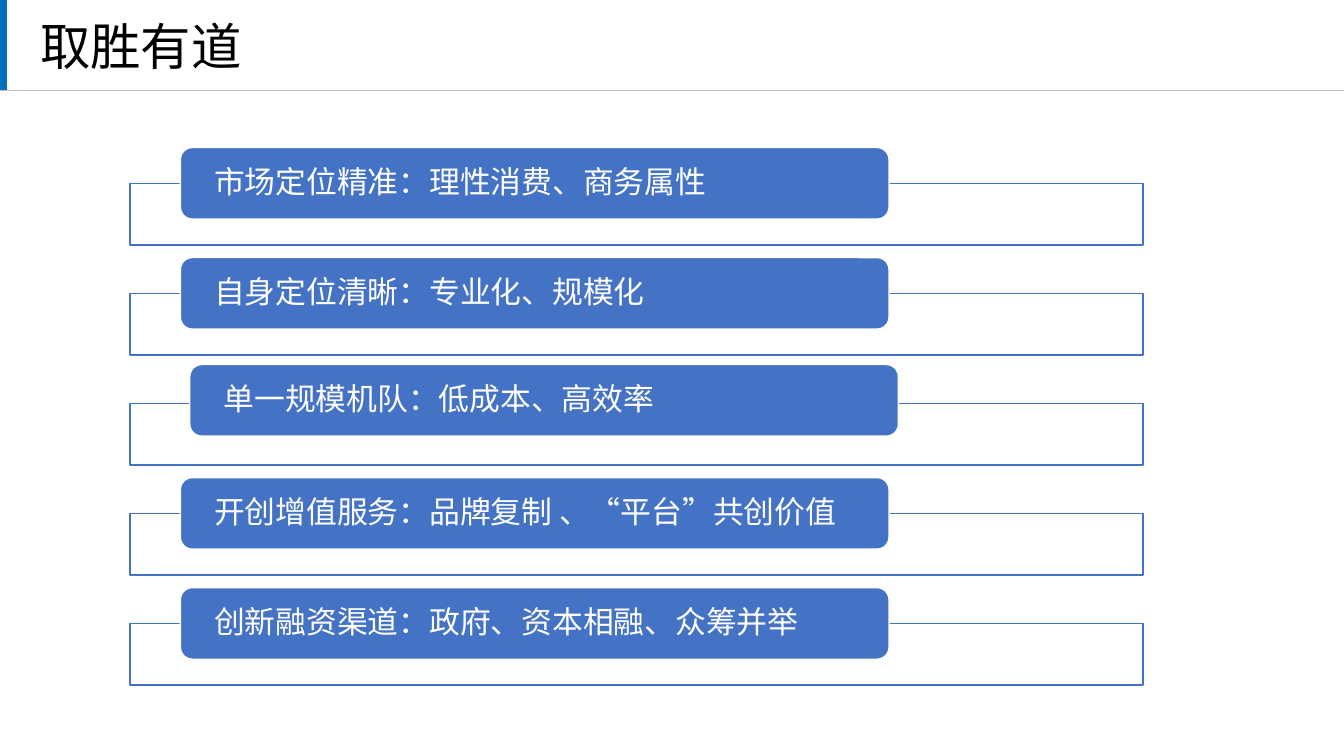
from dataclasses import dataclass

import pptx
import pptx.dml.color
import pptx.enum.shapes
import pptx.enum.text
import pptx.oxml.ns
import pptx.oxml.xmlchemy
import pptx.util
from lxml import etree

COLUMNS = 80
ROWS = 45
SLIDE_WIDTH = pptx.util.Inches(13.33)
SLIDE_HEIGHT = pptx.util.Inches(7.5)


@dataclass(frozen=True)
class Theme:
    font: str = "Noto Sans CJK SC"
    title_size: float = 36
    label_size: float = 22
    line_spacing: float = 0.9
    ink: str = "000000"
    paper: str = "FFFFFF"
    accent: str = "0070C0"
    rule: str = "BFBFBF"
    blue: str = "4472C4"
    rule_width: float = 0.75
    outline_width: float = 1
    frame_opacity: int = 90


@dataclass(frozen=True)
class Area:
    column: float
    row: float
    columns: float
    rows: float

    def moved(self, columns: float, rows: float) -> "Area":
        return Area(self.column + columns, self.row + rows, self.columns, self.rows)

    def box(self) -> tuple[int, int, int, int]:
        return across(self.column), down(self.row), across(self.columns), down(self.rows)


@dataclass(frozen=True)
class Strategy:
    text: str
    shift_columns: float = 0
    shift_rows: float = 0


THEME = Theme()
ACCENT_BAR = Area(0, 0, 0.42, 5.4)
TITLE = Area(1.8, 0.9, 43.26, 4.08)
FRAME = Area(7.74, 10.92, 60.3, 3.66)
LABEL = Area(10.74, 8.78, 42.18, 4.26)
LABEL_INSET = 1.8
PITCH = 6.55
STRATEGIES = [
    Strategy("市场定位精准：理性消费、商务属性"),
    Strategy("自身定位清晰：专业化、规模化"),
    Strategy("单一规模机队：低成本、高效率", 0.56, -0.18),
    Strategy("开创增值服务：品牌复制 、“平台”共创价值"),
    Strategy("创新融资渠道：政府、资本相融、众筹并举"),
]


def across(columns: float) -> int:
    return round(SLIDE_WIDTH * columns / COLUMNS)


def down(rows: float) -> int:
    return round(SLIDE_HEIGHT * rows / ROWS)


def color(value: str) -> pptx.dml.color.RGBColor:
    return pptx.dml.color.RGBColor.from_string(value)


def add_block(page, kind, area: Area, fill: str, line: str | None = None):
    block = page.shapes.add_shape(kind, *area.box())
    block.shadow.inherit = False
    block.fill.solid()
    block.fill.fore_color.rgb = color(fill)
    if line is None:
        block.line.fill.background()
    else:
        block.line.color.rgb = color(line)
        block.line.width = pptx.util.Pt(THEME.outline_width)
    return block


def set_opacity(block, percent: int) -> None:
    tone = block.fill._xPr.find(".//" + pptx.oxml.ns.qn("a:srgbClr"))
    etree.SubElement(tone, pptx.oxml.ns.qn("a:alpha"), val=str(percent * 1000))


def write(box, text: str, size: float, ink: str, inset: float | None = None) -> None:
    frame = box.text_frame
    frame.text = text
    frame.word_wrap = True
    frame.vertical_anchor = pptx.enum.text.MSO_ANCHOR.MIDDLE
    if inset is not None:
        frame.margin_left = frame.margin_right = across(inset)
        frame.margin_top = frame.margin_bottom = 0
    para = frame.paragraphs[0]
    para.alignment = pptx.enum.text.PP_ALIGN.LEFT
    para.line_spacing = THEME.line_spacing
    for span in para.runs:
        span.font.name = THEME.font
        span.font.size = pptx.util.Pt(size)
        span.font.color.rgb = color(ink)
        etree.SubElement(span.font._element, pptx.oxml.ns.qn("a:ea"), typeface=THEME.font)


def add_header(page, title: str) -> None:
    add_block(page, pptx.enum.shapes.MSO_SHAPE.RECTANGLE, ACCENT_BAR, THEME.accent)
    rule = page.shapes.add_connector(
        pptx.enum.shapes.MSO_CONNECTOR.STRAIGHT,
        0, down(ACCENT_BAR.rows), across(COLUMNS), down(ACCENT_BAR.rows),
    )
    rule.line.color.rgb = color(THEME.rule)
    rule.line.width = pptx.util.Pt(THEME.rule_width)
    etree.SubElement(rule._element.spPr, pptx.oxml.ns.qn("a:effectLst"))
    write(page.shapes.add_textbox(*TITLE.box()), title, THEME.title_size, THEME.ink)


def add_strategy(page, strategy: Strategy, index: int) -> None:
    offset = index * PITCH
    frame = add_block(
        page, pptx.enum.shapes.MSO_SHAPE.RECTANGLE,
        FRAME.moved(0, offset), THEME.paper, THEME.blue,
    )
    set_opacity(frame, THEME.frame_opacity)
    label = add_block(
        page, pptx.enum.shapes.MSO_SHAPE.ROUNDED_RECTANGLE,
        LABEL.moved(strategy.shift_columns, offset + strategy.shift_rows),
        THEME.blue, THEME.paper,
    )
    write(label, strategy.text, THEME.label_size, THEME.paper, LABEL_INSET)


def main() -> None:
    deck = pptx.Presentation()
    deck.slide_width = SLIDE_WIDTH
    deck.slide_height = SLIDE_HEIGHT
    page = deck.slides.add_slide(deck.slide_layouts[6])
    add_header(page, "取胜有道")
    for index, strategy in enumerate(STRATEGIES):
        add_strategy(page, strategy, index)
    deck.save("out.pptx")


if __name__ == "__main__":
    main()
